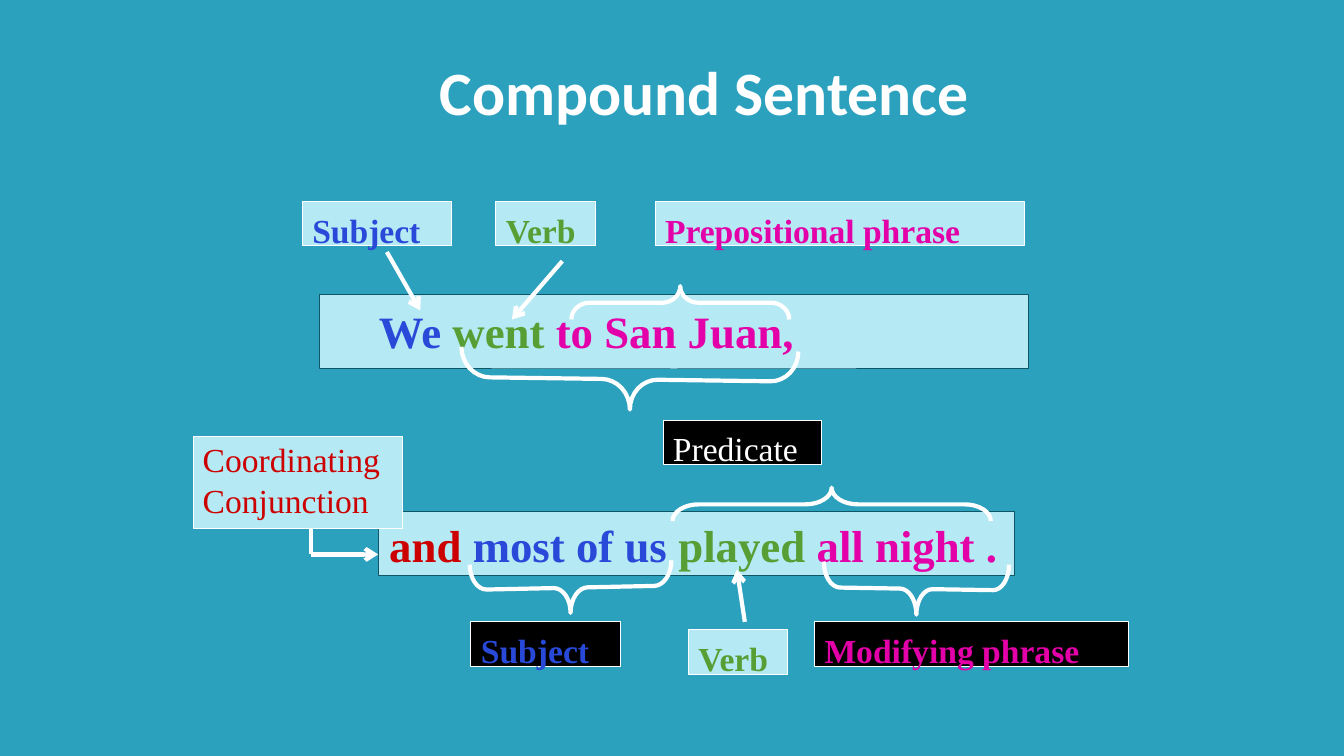
import math

import pptx
import pptx.dml.color
import pptx.enum.shapes
import pptx.enum.text
import pptx.oxml
import pptx.oxml.ns
import pptx.util
from pptx.util import Cm, Pt

COLOURS = {
    "background": "2CA1BE",
    "panel": "B5E9F4",
    "panel_edge": "0F5666",
    "white": "FFFFFF",
    "black": "000000",
    "subject": "294AD9",
    "verb": "579F34",
    "phrase": "E300A8",
    "conjunction": "CC0000",
}
SERIF = "Times New Roman"
LABEL_HEIGHT = 1.12
NARROW, MEDIUM = 2.51, 3.76


def colour(name):
    """Return the named colour."""
    return pptx.dml.color.RGBColor.from_string(COLOURS[name])


def add_panel(slide, box, fill, edge, insets):
    """Draw a filled rectangle and return its first paragraph."""
    panel = slide.shapes.add_shape(
        pptx.enum.shapes.MSO_SHAPE.RECTANGLE, *(Cm(length) for length in box))
    panel.shadow.inherit = False
    panel.fill.solid()
    panel.fill.fore_color.rgb = colour(fill)
    panel.line.color.rgb = colour(edge)
    panel.line.width = Pt(0.72)
    frame = panel.text_frame
    frame.word_wrap = True
    frame.vertical_anchor = pptx.enum.text.MSO_ANCHOR.TOP
    frame.margin_left, frame.margin_top = (Cm(inset) for inset in insets)
    frame.margin_right = frame.margin_bottom = 0
    paragraph = frame.paragraphs[0]
    paragraph.alignment = pptx.enum.text.PP_ALIGN.LEFT
    paragraph.font.name = SERIF
    return paragraph


def add_label(slide, box, text, ink, fill="panel", bold=True, insets=(0.25, 0.2)):
    """Draw a boxed label in one colour."""
    paragraph = add_panel(slide, box, fill, "white", insets)
    paragraph.text = text
    paragraph.font.size = Pt(24)
    paragraph.font.bold = bold
    paragraph.font.color.rgb = colour(ink)


def add_sentence(slide, box, words, insets):
    """Draw a band holding a clause coloured by part of speech."""
    paragraph = add_panel(slide, box, "panel", "panel_edge", insets)
    paragraph.font.size = Pt(32)
    paragraph.font.bold = True
    for text, ink in words:
        run = paragraph.add_run()
        run.text = text
        run.font.color.rgb = colour(ink)


def add_pointer(slide, start, end, arrow=True):
    """Draw a white straight line, with an open arrowhead at its end if asked."""
    pointer = slide.shapes.add_connector(
        pptx.enum.shapes.MSO_CONNECTOR.STRAIGHT,
        *(Cm(length) for length in (*start, *end)))
    pointer.line.color.rgb = colour("white")
    pointer.line.width = Pt(3)
    if arrow:
        head = pptx.oxml.parse_xml(
            f'<a:tailEnd {pptx.oxml.ns.nsdecls("a")} type="arrow"/>')
        pointer.line._get_or_add_ln().append(head)
    pointer._element.spPr.append(
        pptx.oxml.parse_xml(f'<a:effectLst {pptx.oxml.ns.nsdecls("a")}/>'))


def add_brace(slide, start, end, depth, radius):
    """Draw a white brace between two ends; a negative depth points up."""
    (left, left_y), (right, right_y) = start, end
    middle = (left + right) / 2
    angles = [math.pi / 2 * step / 8 for step in range(9)]
    outer = [(left + radius * (1 - math.cos(angle)), depth / 2 * math.sin(angle))
             for angle in angles]
    inner = [(middle - radius * (1 - math.sin(angle)),
              depth / 2 * (2 - math.cos(angle))) for angle in angles]
    half = outer + inner
    mirrored = [(left + right - x, y) for x, y in reversed(half[:-1])]
    slope = (right_y - left_y) / (right - left)
    points = [(Cm(x), Cm(left_y + slope * (x - left) + y))
              for x, y in half + mirrored]
    builder = slide.shapes.build_freeform(*points[0])
    builder.add_line_segments(points[1:], close=False)
    brace = builder.convert_to_shape()
    brace.shadow.inherit = False
    brace.fill.background()
    brace.line.color.rgb = colour("white")
    brace.line.width = Pt(3)


def add_title(slide, box):
    """Place the heading in the title placeholder."""
    title = slide.shapes.title
    title.left, title.top, title.width, title.height = (Cm(length) for length in box)
    frame = title.text_frame
    frame.auto_size = pptx.enum.text.MSO_AUTO_SIZE.NONE
    frame.vertical_anchor = pptx.enum.text.MSO_ANCHOR.TOP
    frame.margin_left, frame.margin_top = Cm(3.66), Cm(0.06)
    frame.margin_right = frame.margin_bottom = 0
    heading = frame.paragraphs[0]
    heading.text = "Compound Sentence"
    heading.alignment = pptx.enum.text.PP_ALIGN.LEFT
    heading.font.name = "Calibri"
    heading.font.size = Pt(44)
    heading.font.bold = True
    heading.font.color.rgb = colour("white")


def add_first_clause(slide, box):
    """Place the first clause with its labels, arrows and braces."""
    left, top, width, height = box

    def at(x, y):
        return left + x, top + y

    add_sentence(slide, (*at(0.43, 2.34), width - 0.43, 1.88),
                 [("We ", "subject"), ("went ", "verb"), ("to San Juan,", "phrase")],
                 (1.5, 0.24))
    add_label(slide, (*at(0, 0), MEDIUM, LABEL_HEIGHT), "Subject", "subject")
    add_label(slide, (*at(4.88, 0), NARROW, LABEL_HEIGHT), "Verb", "verb")
    add_label(slide, (*at(8.89, 0), 9.3, LABEL_HEIGHT),
              "Prepositional phrase", "phrase")
    add_label(slide, (*at(9.09, height - LABEL_HEIGHT), 3.99, LABEL_HEIGHT),
              "Predicate", "white", "black", False)
    add_pointer(slide, at(2.13, 1.27), at(2.97, 2.74))
    add_pointer(slide, at(6.55, 1.5), at(5.28, 2.97))
    add_brace(slide, at(4.01, 3.66), at(12.5, 3.78), 1.52, 0.71)
    add_brace(slide, at(6.78, 2.97), at(12.27, 2.97), -0.84, 0.46)


def add_second_clause(slide, box):
    """Place the second clause with its labels, arrows and braces."""
    left, top, width, height = box

    def at(x, y):
        return left + x, top + y

    label_top = height - LABEL_HEIGHT - 0.2
    add_sentence(slide, (*at(4.65, 1.9), 16.05, 1.6),
                 [("and ", "conjunction"), ("most of us ", "subject"),
                  ("played ", "verb"), ("all night .", "phrase")], (0.28, 0.14))
    add_label(slide, (*at(0, 0), 5.26, 2.31), "Coordinating Conjunction",
              "conjunction", bold=False, insets=(0.23, 0.07))
    add_label(slide, (*at(6.99, label_top), MEDIUM, LABEL_HEIGHT),
              "Subject", "subject", "black")
    add_label(slide, (*at(12.47, label_top + 0.2), NARROW, LABEL_HEIGHT),
              "Verb", "verb")
    add_label(slide, (*at(width - 7.9, label_top), 7.9, LABEL_HEIGHT),
              "Modifying phrase", "phrase", "black")
    add_pointer(slide, at(2.95, 2.31), at(2.95, 2.97), arrow=False)
    add_pointer(slide, at(2.95, 2.97), at(4.65, 2.97))
    add_pointer(slide, at(13.89, 4.67), at(13.69, 3.35))
    add_brace(slide, at(12.07, 2.13), at(20.09, 2.13), -0.84, 0.66)
    add_brace(slide, at(6.96, 3.23), at(12.04, 3.12), 1.27, 0.43)
    add_brace(slide, at(15.88, 3.15), at(20.55, 3.23), 1.3, 0.41)


def main():
    """Build the slide and save it."""
    presentation = pptx.Presentation()
    presentation.slide_width, presentation.slide_height = Cm(33.87), Cm(19.05)
    slide = presentation.slides.add_slide(presentation.slide_layouts[5])
    slide.background.fill.solid()
    slide.background.fill.fore_color.rgb = colour("background")
    add_title(slide, (7.42, 1.3, 26.4, 1.93))
    add_first_clause(slide, (7.62, 5.08, 18.29, 6.63))
    add_second_clause(slide, (4.88, 11, 23.55, 5.99))
    presentation.save("out.pptx")


if __name__ == "__main__":
    main()
